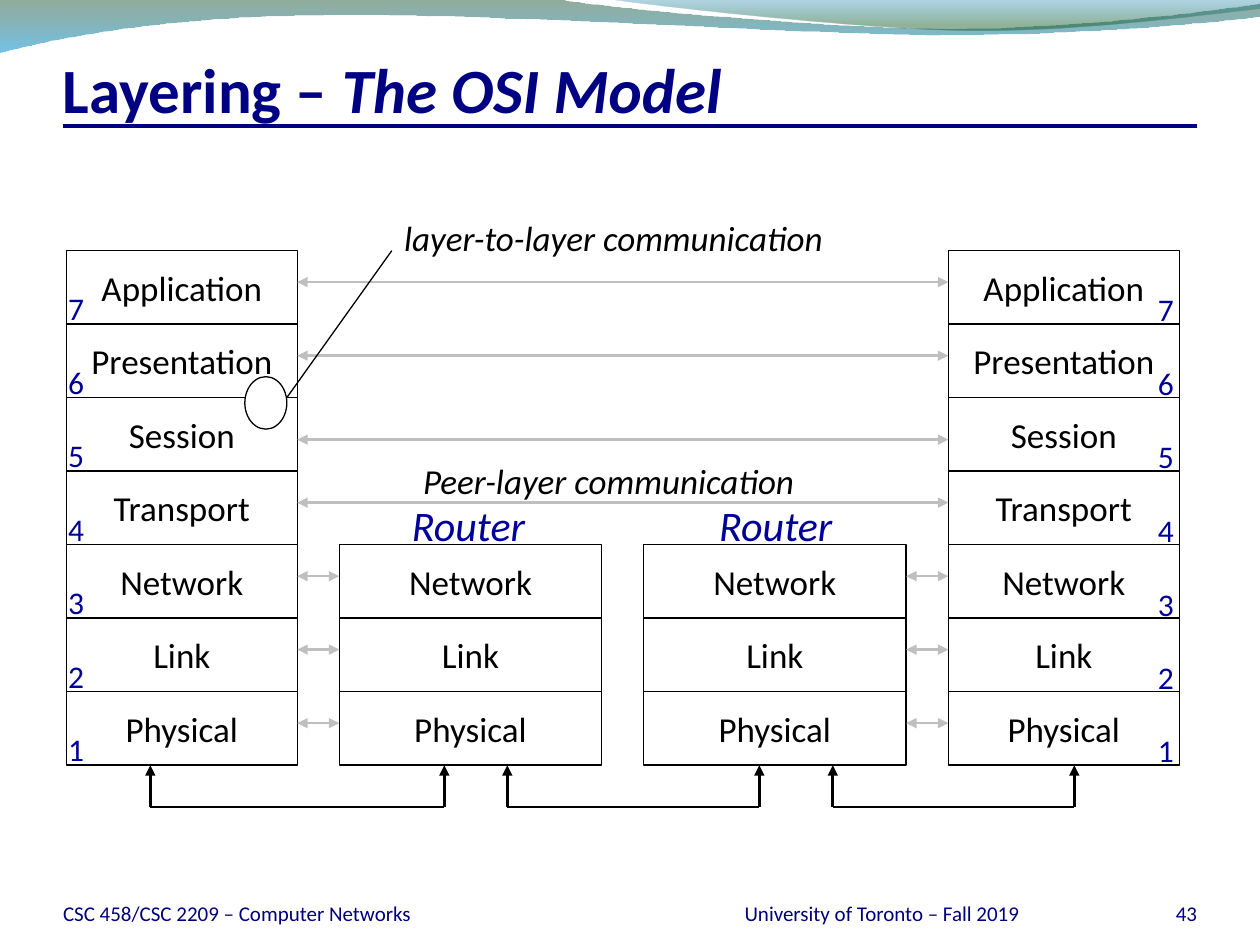
import pptx
import pptx.util
import pptx.dml.color
import pptx.enum.shapes
import pptx.enum.text
import pptx.oxml
import pptx.oxml.ns

Pt = pptx.util.Pt
RGB = pptx.dml.color.RGBColor
Align = pptx.enum.text.PP_ALIGN
Anchor = pptx.enum.text.MSO_ANCHOR
Fit = pptx.enum.text.MSO_AUTO_SIZE
Kind = pptx.enum.shapes.MSO_SHAPE
qn = pptx.oxml.ns.qn

BLACK = RGB(0, 0, 0)
WHITE = RGB(255, 255, 255)
GRAY = RGB(0xBF, 0xBF, 0xBF)
NAVY = RGB(0, 0, 0x82)
FOOT = RGB(0, 0, 0x7C)
BLUE = RGB(0, 0, 0x99)
MOSS = RGB(0x0F, 0x46, 0x1E)
SKY = RGB(0, 0x90, 0xD6)
TEAL = RGB(0, 0x76, 0xAF)
PINE = RGB(0x0D, 0x58, 0x21)

deck = pptx.Presentation()
deck.slide_width, deck.slide_height = Pt(720), Pt(540)
slide = deck.slides.add_slide(deck.slide_layouts[6])
shapes = slide.shapes


def write(box, runs, size, color, form, align=Align.LEFT, bold=False):
    """Fill a box with (text, italic) runs; form holds the frame values."""
    for name, value in form.items():
        setattr(box.text_frame, name, value)
    para = box.text_frame.paragraphs[0]
    para.alignment = align
    for words, slant in runs:
        run = para.add_run()
        run.text = words
        font = {"name": "Calibri", "size": Pt(size), "bold": bold, "italic": slant}
        for name, value in font.items():
            setattr(run.font, name, value)
        run.font.color.rgb = color


def link(x1, y1, x2, y2, color, width, ends=()):
    """Draw a line; ends names the tips that carry an arrowhead."""
    line = shapes.add_connector(
        pptx.enum.shapes.MSO_CONNECTOR.STRAIGHT, Pt(x1), Pt(y1), Pt(x2), Pt(y2))
    line.line.color.rgb = color
    line.line.width = Pt(width)
    for end in ends:
        tip = pptx.oxml.parse_xml(
            f'<a:{end} {pptx.oxml.ns.nsdecls("a")} type="triangle"/>')
        line.line._get_or_add_ln().append(tip)
    props = line._element.spPr
    props.append(props.makeelement(qn("a:effectLst"), {}))


# Waves: two numbers make a straight edge, six a Bezier curve
waves = [
    ([(0, -0.72), (316.8, -0.72),
      (342.72, 4.32, 478.08, 16.56, 545.76, 16.56),
      (614.16, 16.56, 689.76, 6.48, 720, 2.16), (720.72, 9.36),
      (707.76, 11.52, 626.4, 20.16, 537.12, 20.16),
      (447.84, 19.44, 275.04, 7.2, 185.04, 8.64),
      (92.88, 9.36, 33.12, 21.6, -0.72, 30.24), (0, -0.72)],
     [(0, MOSS, 45), (1, SKY, 55)]),
    ([(344.88, -0.72), (366.48, 2.88, 491.04, 16.56, 553.68, 17.28),
      (616.32, 18, 691.92, 7.92, 720, 5.04), (720, -0.72), (344.88, -0.72)],
     [(0, TEAL, 30), (0.8, PINE, 45)]),
]
for parts, stops in waves:
    pen = shapes.build_freeform(Pt(parts[0][0]), Pt(parts[0][1]))
    pen.add_line_segments([(Pt(p[-2]), Pt(p[-1])) for p in parts[1:]], close=True)
    wave = pen.convert_to_shape()
    edges = list(wave._element.iter(qn("a:lnTo")))
    for edge, part in zip(edges, parts[1:]):
        if len(part) == 6:
            curve = edge.makeelement(qn("a:cubicBezTo"), {})
            for x, y in zip(part[::2], part[1::2]):
                curve.append(curve.makeelement(qn("a:pt"), {
                    "x": str(Pt(x) - wave.left), "y": str(Pt(y) - wave.top)}))
            edge.getparent().replace(edge, curve)
    wave.shadow.inherit = False
    wave.line.fill.background()
    wave.fill.gradient()
    wave.fill.gradient_angle = 270
    for stop, (place, color, solid) in zip(wave.fill.gradient_stops, stops):
        stop.position = place
        stop.color.rgb = color
    tints = wave._element.spPr.iter(qn("a:srgbClr"))
    for tint, (place, color, solid) in zip(tints, stops):
        tint.append(tint.makeelement(qn("a:alpha"), {"val": str(solid * 1000)}))

# Title with its rule, and footer
link(36, 72, 684, 72, NAVY, 2.25)
flush = {"word_wrap": True, "vertical_anchor": Anchor.BOTTOM, "margin_left": 0,
         "margin_right": 0, "margin_top": 0, "margin_bottom": 0}
title = shapes.add_textbox(Pt(36), Pt(24), Pt(648), Pt(48))
write(title, [("Layering – ", False), ("The OSI Model", True)], 36, NAVY,
      {**flush, "margin_top": Pt(3.6)}, bold=True)
for left, width, words, align in [
        (36, 348, "CSC 458/CSC 2209 – Computer Networks", Align.LEFT),
        (624, 60, "43", Align.RIGHT),
        (390, 228, "University of Toronto – Fall 2019", Align.CENTER)]:
    foot = shapes.add_textbox(Pt(left), Pt(500.25), Pt(width), Pt(28.75))
    write(foot, [(words, False)], 12, FOOT, flush, align)

# Layer stacks: two hosts with all layers, two routers with the lowest three
LAYERS = ["Application", "Presentation", "Session", "Transport",
          "Network", "Link", "Physical"]
TOP, STEP = 143.25, 42
BASE = TOP + STEP * len(LAYERS)
for left, width, first in [(37.9, 132, 0), (193.9, 150, 4),
                           (367.8, 150, 4), (541.9, 132, 0)]:
    for row in range(first, len(LAYERS)):
        cell = shapes.add_shape(Kind.RECTANGLE, Pt(left), Pt(TOP + row * STEP),
                                Pt(width), Pt(STEP))
        cell.shadow.inherit = False
        cell.fill.solid()
        cell.fill.fore_color.rgb = WHITE
        cell.line.color.rgb = BLACK
        cell.line.width = Pt(0.75)
        write(cell, [(LAYERS[row], False)], 20, BLACK,
              {"word_wrap": False, "vertical_anchor": Anchor.MIDDLE}, Align.CENTER)

# Peer arrows: host to host above, host to router below
BOTH = ("headEnd", "tailEnd")
for row, name in enumerate(LAYERS):
    y = TOP + row * STEP + (24 if name == "Session" else 18)
    for x1, x2 in [(169.9, 541.9)] if row < 4 else [(169.9, 193.9), (517.8, 541.9)]:
        link(x1, y, x2, y, GRAY, 1.5, BOTH)

# Physical wires under the stacks
for x1, x2 in [(85.9, 253.9), (289.9, 433.9), (475.9, 613.9)]:
    link(x1, BASE + 24, x2, BASE + 24, BLACK, 1.5)
    for x in (x1, x2):
        link(x, BASE + 24, x, BASE, BLACK, 1.5, ["tailEnd"])

# Callout between two layers
ring = shapes.add_shape(Kind.OVAL, Pt(139.9), Pt(215.25), Pt(24), Pt(30))
ring.shadow.inherit = False
ring.fill.solid()
ring.fill.fore_color.rgb = WHITE
ring.line.color.rgb = BLACK
ring.line.width = Pt(0.75)
link(163.9, 227.25, 223.9, 143.25, BLACK, 0.75)

# Captions and layer numbers
notes = [(234.7, 259.25, 227.5, 31, "Peer-layer communication", 20, BLACK, True),
         (223.9, 120.25, 255, 31, "layer-to-layer communication", 20, BLACK, True)]
notes += [(x, 281.9, 80, 36, "Router", 24, BLUE, True) for x in (228.3, 403.9)]
for x, y in [(31.8, TOP + 18.4), (654.5, TOP + 19.2)]:
    notes += [(x, y + row * STEP, 24, 29, str(7 - row), 18, BLUE, False)
              for row in range(7)]
for left, top, width, height, words, size, color, slant in notes:
    note = shapes.add_textbox(Pt(left), Pt(top), Pt(width), Pt(height))
    write(note, [(words, slant)], size, color,
          {"word_wrap": False, "auto_size": Fit.SHAPE_TO_FIT_TEXT})

deck.save("out.pptx")
